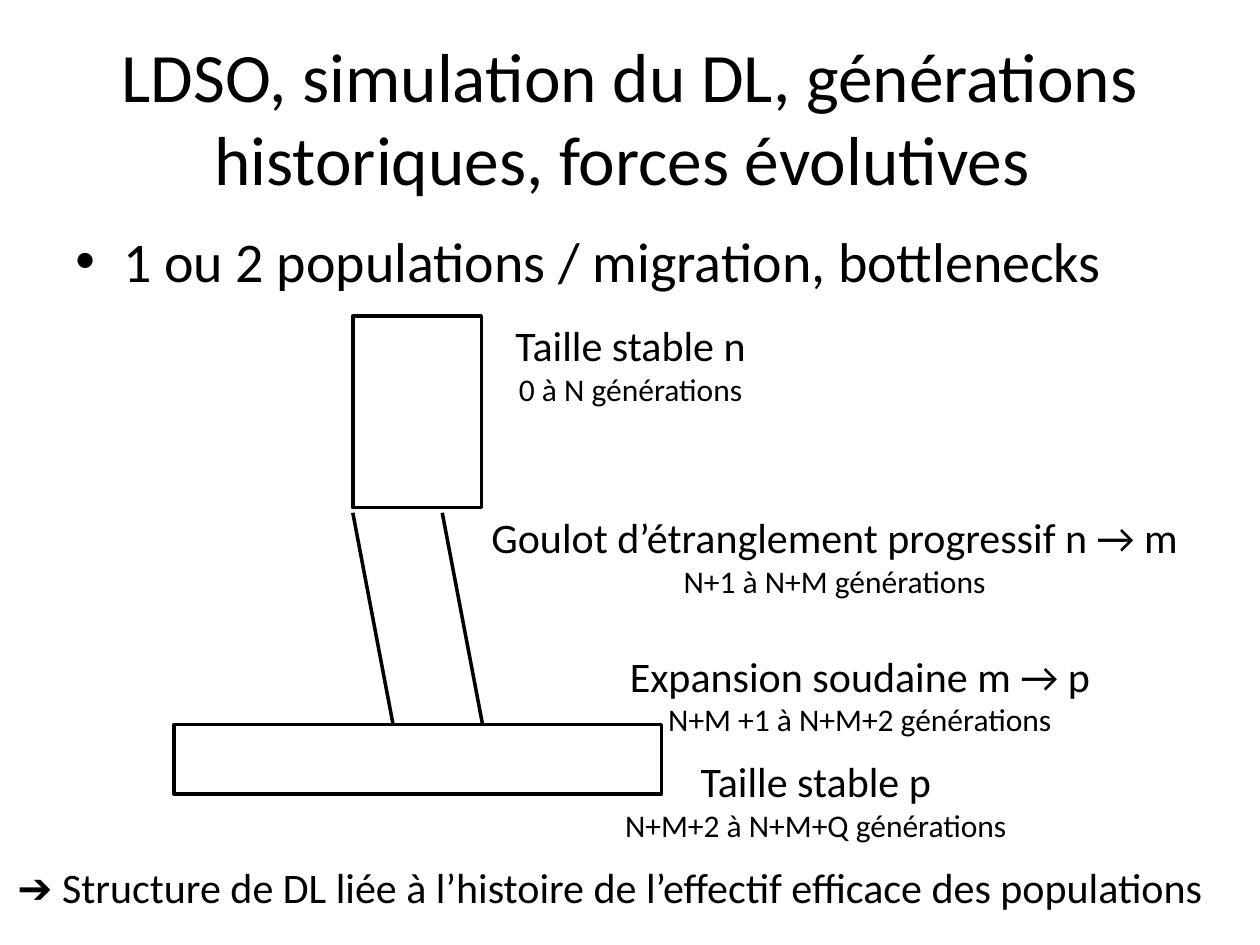
"""Build a slide on simulated population history and linkage disequilibrium."""
from dataclasses import dataclass

from lxml.etree import SubElement
from pptx import Presentation
from pptx.dml.color import RGBColor
from pptx.enum.shapes import MSO_CONNECTOR, MSO_SHAPE
from pptx.enum.text import MSO_ANCHOR, PP_ALIGN
from pptx.oxml.ns import qn
from pptx.slide import Slide
from pptx.text.text import _Paragraph as Paragraph
from pptx.util import Inches, Pt


@dataclass(frozen=True)
class Theme:
    font: str = "Calibri"
    ink: RGBColor = RGBColor(0, 0, 0)
    paper: RGBColor = RGBColor(255, 255, 255)
    title: float = 39.6
    body: float = 32
    label: float = 24
    detail: float = 18
    line: float = 2


@dataclass(frozen=True)
class Box:
    left: float
    top: float
    width: float
    height: float

    def lengths(self) -> list[Inches]:
        return [Inches(value) for value in (self.left, self.top, self.width, self.height)]


@dataclass(frozen=True)
class TextBlock:
    box: Box
    lines: tuple[tuple[str, float], ...]
    alignment: PP_ALIGN = PP_ALIGN.CENTER
    anchor: MSO_ANCHOR = MSO_ANCHOR.TOP
    wrap: bool = False


@dataclass(frozen=True)
class Segment:
    start: tuple[float, float]
    end: tuple[float, float]


THEME = Theme()


def phase(box: Box, name: str, generations: str) -> TextBlock:
    return TextBlock(box, ((name, THEME.label), (generations, THEME.detail)))


TITLE = TextBlock(
    Box(0.5, 0.3, 9, 1.25),
    (("LDSO, simulation du DL, générations historiques, forces évolutives ", THEME.title),),
    anchor=MSO_ANCHOR.MIDDLE,
    wrap=True,
)
BULLET = TextBlock(
    Box(0.5, 1.75, 9, 4.95),
    (("1 ou 2 populations / migration, bottlenecks", THEME.body),),
    alignment=PP_ALIGN.LEFT,
    wrap=True,
)
PHASES = (
    phase(Box(3.98, 2.49, 2.05, 0.81), "Taille stable n", "0 à N générations"),
    phase(Box(3.76, 4.01, 5.73, 0.81), "Goulot d’étranglement progressif n → m", "N+1 à N+M générations"),
    phase(Box(4.84, 5.95, 3.27, 0.81), "Taille stable p", "N+M+2 à N+M+Q générations"),
    phase(Box(4.87, 5.11, 3.91, 0.81), "Expansion soudaine m → p", "N+M +1 à N+M+2 générations"),
)
CONCLUSION = TextBlock(
    Box(0.04, 6.79, 9.93, 0.5),
    (("➔ Structure de DL liée à l’histoire de l’effectif efficace des populations", THEME.label),),
    alignment=PP_ALIGN.LEFT,
)
POPULATIONS = (Box(1.38, 5.75, 3.87, 0.55), Box(2.8, 2.51, 1.02, 1.52))
BOTTLENECK = (
    Segment((2.8, 4.07), (3.12, 5.75)),
    Segment((3.51, 4.07), (3.83, 5.75)),
    Segment((3.12, 5.75), (3.51, 5.75)),
)


def add_text(slide: Slide, block: TextBlock) -> list[Paragraph]:
    text_frame = slide.shapes.add_textbox(*block.box.lengths()).text_frame
    text_frame.word_wrap = block.wrap
    text_frame.vertical_anchor = block.anchor
    text_frame.text = "\n".join(text for text, _ in block.lines)
    for paragraph, (_, size) in zip(text_frame.paragraphs, block.lines):
        paragraph.alignment = block.alignment
        for run in paragraph.runs:
            run.font.name = THEME.font
            run.font.size = Pt(size)
            run.font.color.rgb = THEME.ink
    return list(text_frame.paragraphs)


def add_bullet(paragraph: Paragraph, indent: float) -> None:
    properties = paragraph._p.get_or_add_pPr()
    properties.set("marL", str(Inches(indent)))
    properties.set("indent", str(-Inches(indent)))
    SubElement(properties, qn("a:buFont"), typeface="Arial")
    SubElement(properties, qn("a:buChar"), char="•")


def add_population(slide: Slide, box: Box) -> None:
    shape = slide.shapes.add_shape(MSO_SHAPE.RECTANGLE, *box.lengths())
    shape.shadow.inherit = False
    shape.fill.solid()
    shape.fill.fore_color.rgb = THEME.paper
    shape.line.color.rgb = THEME.ink
    shape.line.width = Pt(THEME.line)


def add_segment(slide: Slide, segment: Segment) -> None:
    ends = [Inches(value) for value in segment.start + segment.end]
    connector = slide.shapes.add_connector(MSO_CONNECTOR.STRAIGHT, *ends)
    connector.line.color.rgb = THEME.ink
    connector.line.width = Pt(THEME.line)
    SubElement(connector._element.spPr, qn("a:effectLst"))


def main() -> None:
    presentation = Presentation()
    presentation.slide_width = Inches(10)
    presentation.slide_height = Inches(7.5)
    slide = presentation.slides.add_slide(presentation.slide_layouts[6])
    slide.background.fill.solid()
    slide.background.fill.fore_color.rgb = THEME.paper

    add_text(slide, TITLE)
    for paragraph in add_text(slide, BULLET):
        add_bullet(paragraph, 0.38)
    for box in POPULATIONS:
        add_population(slide, box)
    for segment in BOTTLENECK:
        add_segment(slide, segment)
    for block in (*PHASES, CONCLUSION):
        add_text(slide, block)
    presentation.save("out.pptx")


if __name__ == "__main__":
    main()
